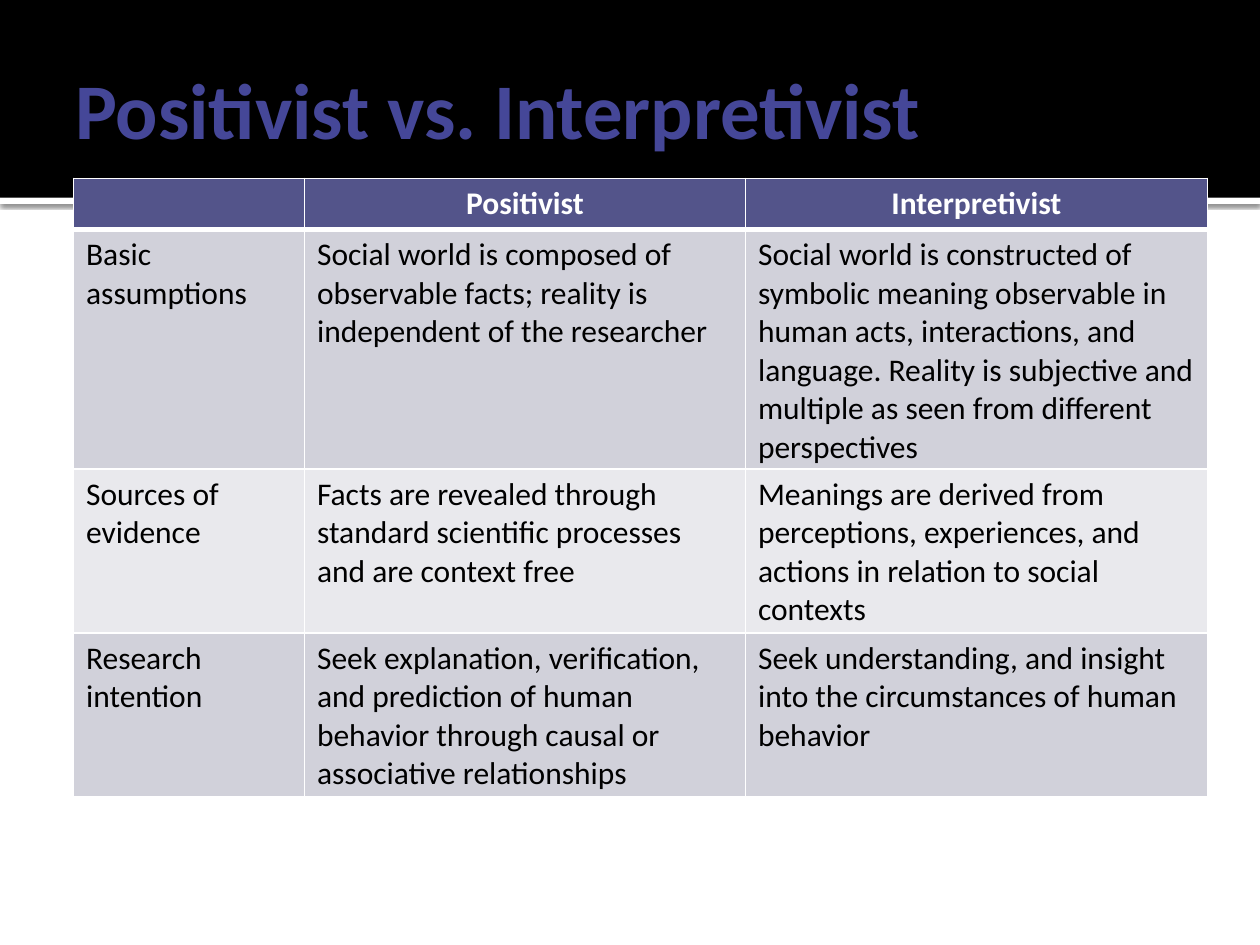
"""Builds a slide comparing positivist and interpretivist research."""
from dataclasses import dataclass

from pptx import Presentation
from pptx.dml.color import RGBColor
from pptx.enum.shapes import MSO_SHAPE
from pptx.enum.text import MSO_ANCHOR, PP_ALIGN
from pptx.oxml import parse_xml
from pptx.util import Pt

RECTANGLE = MSO_SHAPE.RECTANGLE
MIDDLE = MSO_ANCHOR.MIDDLE
LEFT, CENTER = PP_ALIGN.LEFT, PP_ALIGN.CENTER
NAMESPACE = "http://schemas.openxmlformats.org/drawingml/2006/main"


@dataclass(frozen=True)
class Theme:
    font: str = "Calibri"
    title_size: float = 45
    table_size: float = 18
    title: str = "454798"
    white: str = "FFFFFF"
    black: str = "000000"
    header: str = "53548A"
    bands: tuple = ("D1D1DA", "E9E9ED")


class SlideBuilder:
    def __init__(self, slide, theme):
        self.slide = slide
        self.theme = theme

    def bar(self, left, top, width, height, color):
        shape = self.slide.shapes.add_shape(
            RECTANGLE, Pt(left), Pt(top), Pt(width), Pt(height))
        shape.shadow.inherit = False
        shape.fill.solid()
        shape.fill.fore_color.rgb = RGBColor.from_string(color)
        shape.line.fill.background()
        return shape

    def shadow(self, shape, blur, distance, opacity):
        effects = shape._element.spPr.find(f"{{{NAMESPACE}}}effectLst")
        effects.append(parse_xml(
            f'<a:outerShdw xmlns:a="{NAMESPACE}" blurRad="{Pt(blur)}" '
            f'dist="{Pt(distance)}" dir="5400000" algn="tl" rotWithShape="0">'
            f'<a:srgbClr val="{self.theme.black}">'
            f'<a:alpha val="{opacity * 1000}"/></a:srgbClr></a:outerShdw>'))

    def add_text(self, frame, text, size, color, bold=False, align=LEFT):
        paragraph = frame.paragraphs[0]
        paragraph.alignment = align
        if not text:
            paragraph.font.size = Pt(size)
            return
        run = paragraph.add_run()
        run.text = text
        run.font.name = self.theme.font
        run.font.size = Pt(size)
        run.font.bold = bold
        run.font.color.rgb = RGBColor.from_string(color)

    def title(self, text, left, top, width, height):
        frame = self.slide.shapes.add_textbox(
            Pt(left), Pt(top), Pt(width), Pt(height)).text_frame
        frame.word_wrap = True
        frame.vertical_anchor = MIDDLE
        frame.margin_left = Pt(7.2)
        frame.margin_right = Pt(3.6)
        self.add_text(frame, text, self.theme.title_size, self.theme.title, True)

    def borders(self, cell, widths):
        properties = cell._tc.get_or_add_tcPr()
        for position, (side, width) in enumerate(widths.items()):
            line = parse_xml(
                f'<a:{side} xmlns:a="{NAMESPACE}" w="{Pt(width)}"><a:solidFill>'
                f'<a:srgbClr val="{self.theme.white}"/></a:solidFill></a:{side}>')
            properties.insert(position, line)

    def table(self, rows, left, top, column_widths, row_height):
        theme = self.theme
        table = self.slide.shapes.add_table(
            len(rows), len(column_widths), Pt(left), Pt(top),
            Pt(sum(column_widths)), Pt(row_height * len(rows))).table
        for column, width in zip(table.columns, column_widths):
            column.width = Pt(width)
        for row_index, texts in enumerate(rows):
            table.rows[row_index].height = Pt(row_height)
            is_header = row_index == 0
            fill = theme.header if is_header else theme.bands[(row_index - 1) % 2]
            color = theme.white if is_header else theme.black
            align = CENTER if is_header else LEFT
            widths = {"lnL": 1, "lnR": 1, "lnT": 3 if row_index == 1 else 1,
                      "lnB": 3 if is_header else 1}
            for column_index, text in enumerate(texts):
                cell = table.cell(row_index, column_index)
                cell.fill.solid()
                cell.fill.fore_color.rgb = RGBColor.from_string(fill)
                self.add_text(cell.text_frame, text, theme.table_size, color,
                              is_header, align)
                self.borders(cell, widths)


ROWS = [
    ("", "Positivist", "Interpretivist"),
    ("Basic assumptions",
     "Social world is composed of observable facts; reality is independent "
     "of the researcher",
     "Social world is constructed of symbolic meaning observable in human "
     "acts, interactions, and language. Reality is subjective and multiple "
     "as seen from different perspectives"),
    ("Sources of evidence",
     "Facts are revealed through standard scientific processes and are "
     "context free",
     "Meanings are derived from perceptions, experiences, and actions in "
     "relation to social contexts"),
    ("Research intention",
     "Seek explanation, verification, and prediction of human behavior "
     "through causal or associative relationships",
     "Seek understanding, and insight into the circumstances of human "
     "behavior"),
]


def main():
    presentation = Presentation()
    presentation.slide_width = Pt(720)
    presentation.slide_height = Pt(540)
    theme = Theme()
    slide = presentation.slides.add_slide(presentation.slide_layouts[6])
    builder = SlideBuilder(slide, theme)
    rule = builder.bar(0, 113, 720, 3.6, theme.white)
    builder.shadow(rule, blur=2.5, distance=0.8, opacity=60)
    builder.bar(0, 0, 720, 113, theme.black)
    builder.title("Positivist vs. Interpretivist", 36, 12.24, 648, 98.64)
    builder.table(ROWS, 42, 102, (132, 252, 264), 29.2)
    presentation.save("out.pptx")


main()
